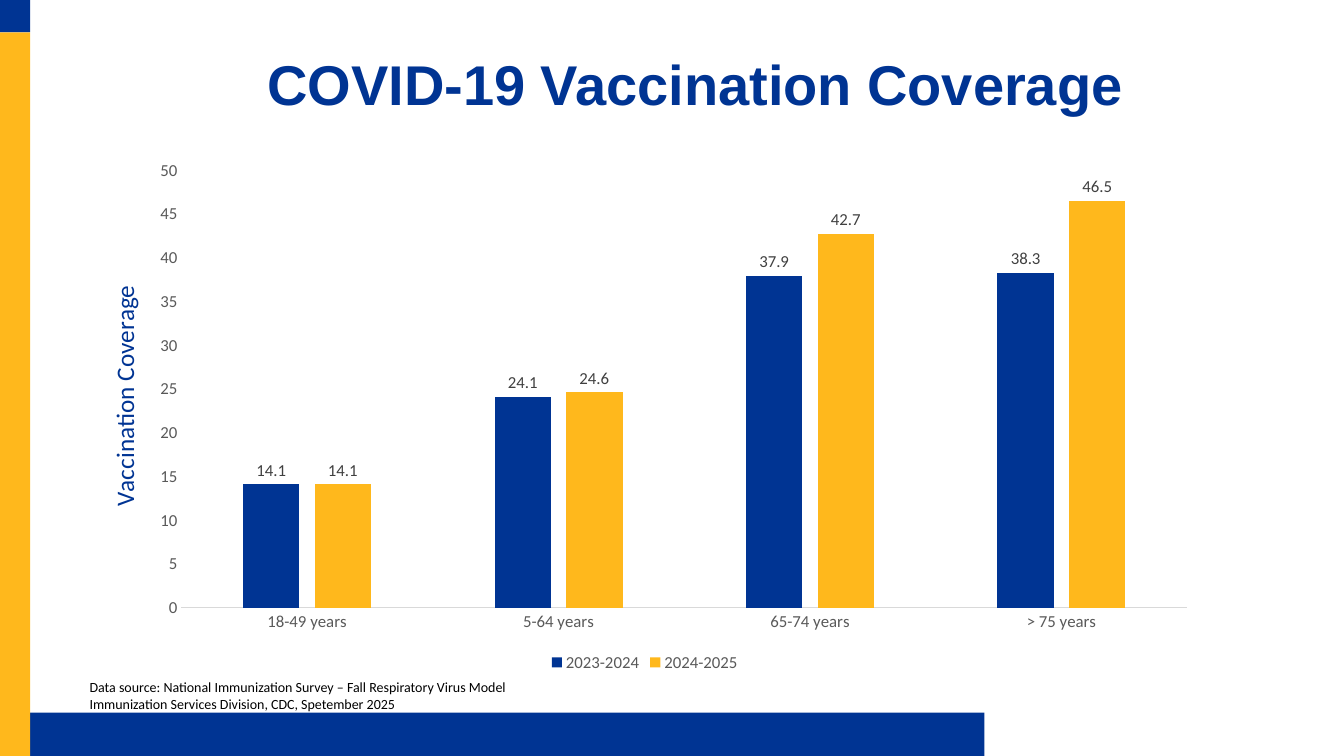
import pptx
import pptx.chart.data
import pptx.dml.color
import pptx.enum.chart
import pptx.enum.shapes
import pptx.enum.text
import pptx.oxml
import pptx.oxml.ns
import pptx.util

WIDTH, HEIGHT = 13.33, 7.5
BLUE, GOLD, GREY, DARK = "003493", "FFB81C", "595959", "404040"
AGE_GROUPS = ["18-49 years", "5-64 years", "65-74 years", "> 75 years"]
SEASONS = [
    ("2023-2024", (14.1, 24.1, 37.9, 38.3), BLUE),
    ("2024-2025", (14.1, 24.6, 42.7, 46.5), GOLD),
]


def colour(value):
    return pptx.dml.color.RGBColor.from_string(value)


def inches(box):
    return [pptx.util.Inches(length) for length in box]


def style(font, size, value, name="Calibri", bold=False):
    font.size = pptx.util.Pt(size)
    font.color.rgb = colour(value)
    font.name = name
    font.bold = bold


def add_band(page, box, fill):
    band = page.shapes.add_shape(pptx.enum.shapes.MSO_SHAPE.RECTANGLE, *inches(box))
    band.shadow.inherit = False
    band.fill.solid()
    band.fill.fore_color.rgb = colour(fill)
    band.line.fill.background()


def add_frame(page, box):
    """Blue corner and foot with a gold strip down the left side."""
    left, top, width, height = box
    strip, corner, foot = 0.3, 0.32, 0.43
    add_band(page, (left + strip, top + height - foot, width * 0.71, foot), BLUE)
    add_band(page, (left, top + corner, strip, height - corner), GOLD)
    add_band(page, (left, top, strip, corner), BLUE)


def add_title(page, box, text):
    frame = page.shapes.add_textbox(*inches(box)).text_frame
    frame.word_wrap = True
    frame.margin_left = frame.margin_right = 0
    frame.text = text
    para = frame.paragraphs[0]
    para.alignment = pptx.enum.text.PP_ALIGN.CENTER
    para.line_spacing = 0.9
    style(para.runs[0].font, 40, BLUE, "Arial", True)


def add_source(page, box, lines):
    frame = page.shapes.add_textbox(*inches(box)).text_frame
    frame.word_wrap = False
    frame.text = "\n".join(lines)
    for para in frame.paragraphs:
        style(para.runs[0].font, 10, "000000")


def place(parent, index, shares):
    """Fix a chart part at shares of the chart's size."""
    for old in parent.findall(pptx.oxml.ns.qn("c:layout")):
        parent.remove(old)
    target = '<c:layoutTarget val="inner"/>' if len(shares) == 4 else ""
    modes = '<c:xMode val="edge"/><c:yMode val="edge"/>'
    values = "".join(f'<c:{key} val="{share}"/>' for key, share in zip("xywh", shares))
    parent.insert(index, pptx.oxml.parse_xml(
        f'<c:layout {pptx.oxml.ns.nsdecls("c")}><c:manualLayout>'
        f"{target}{modes}{values}</c:manualLayout></c:layout>"))


def style_axes(chart):
    for axis in (chart.category_axis, chart.value_axis):
        axis.major_tick_mark = axis.minor_tick_mark = pptx.enum.chart.XL_TICK_MARK.NONE
        axis.has_major_gridlines = False
        style(axis.tick_labels.font, 12, GREY)
    line = chart.category_axis.format.line
    line.color.rgb = colour("D9D9D9")
    line.width = pptx.util.Pt(0.75)

    axis = chart.value_axis
    axis.format.line.fill.background()
    axis.minimum_scale, axis.maximum_scale, axis.major_unit = 0, 50, 5
    frame = axis.axis_title.text_frame
    frame.text = "Vaccination Coverage"
    style(frame.paragraphs[0].runs[0].font, 18, BLUE)
    title = axis.axis_title.element
    body = title.find(".//" + pptx.oxml.ns.qn("a:bodyPr"))
    body.set("rot", "-5400000")
    body.set("vert", "horz")
    place(title, 1, (0.02, 0.25))


def add_coverage_chart(page, box):
    data = pptx.chart.data.CategoryChartData(number_format="0.0")
    data.categories = AGE_GROUPS
    for name, values, _ in SEASONS:
        data.add_series(name, values)
    chart = page.shapes.add_chart(
        pptx.enum.chart.XL_CHART_TYPE.COLUMN_CLUSTERED, *inches(box), data).chart
    chart.has_title = False
    style(chart.font, 10, "000000")
    style_axes(chart)
    chart.value_axis.tick_labels.number_format = "0"
    chart.value_axis.tick_labels.number_format_is_linked = False
    place(chart.element.find(".//" + pptx.oxml.ns.qn("c:plotArea")), 0,
          (0.09, 0.04, 0.89, 0.83))

    # Columns and their values
    plot = chart.plots[0]
    plot.vary_by_categories = False
    plot.gap_width, plot.overlap = 219, -27
    for series, (_, _, fill) in zip(plot.series, SEASONS):
        series.format.fill.solid()
        series.format.fill.fore_color.rgb = colour(fill)
        labels = series.data_labels
        labels.show_value = True
        labels.position = pptx.enum.chart.XL_LABEL_POSITION.OUTSIDE_END
        style(labels.font, 12, DARK)

    # Legend
    chart.has_legend = True
    chart.legend.position = pptx.enum.chart.XL_LEGEND_POSITION.BOTTOM
    chart.legend.include_in_layout = False
    style(chart.legend.font, 12, GREY)


def main():
    deck = pptx.Presentation()
    deck.slide_width, deck.slide_height = inches((WIDTH, HEIGHT))
    page = deck.slides.add_slide(deck.slide_layouts[6])
    add_frame(page, (0, 0, WIDTH, HEIGHT))
    add_title(page, (1.09, 0.52, 11.76, 0.78), "COVID-19 Vaccination Coverage ")
    add_coverage_chart(page, (0.79, 1.48, 11.21, 5.23))
    add_source(page, (0.79, 6.68, 4.4, 0.44), [
        "Data source: National Immunization Survey – Fall Respiratory Virus Model",
        "Immunization Services Division, CDC, Spetember 2025",
    ])
    deck.save("out.pptx")


if __name__ == "__main__":
    main()
